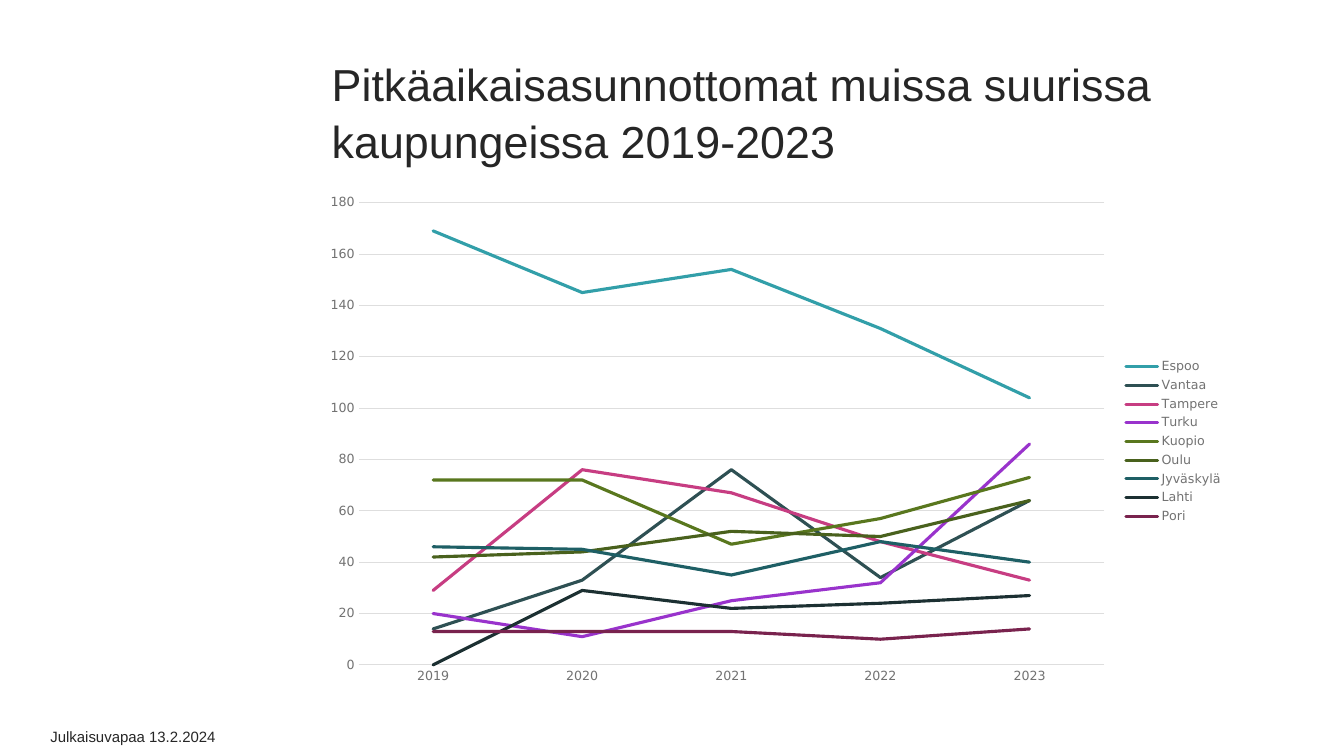
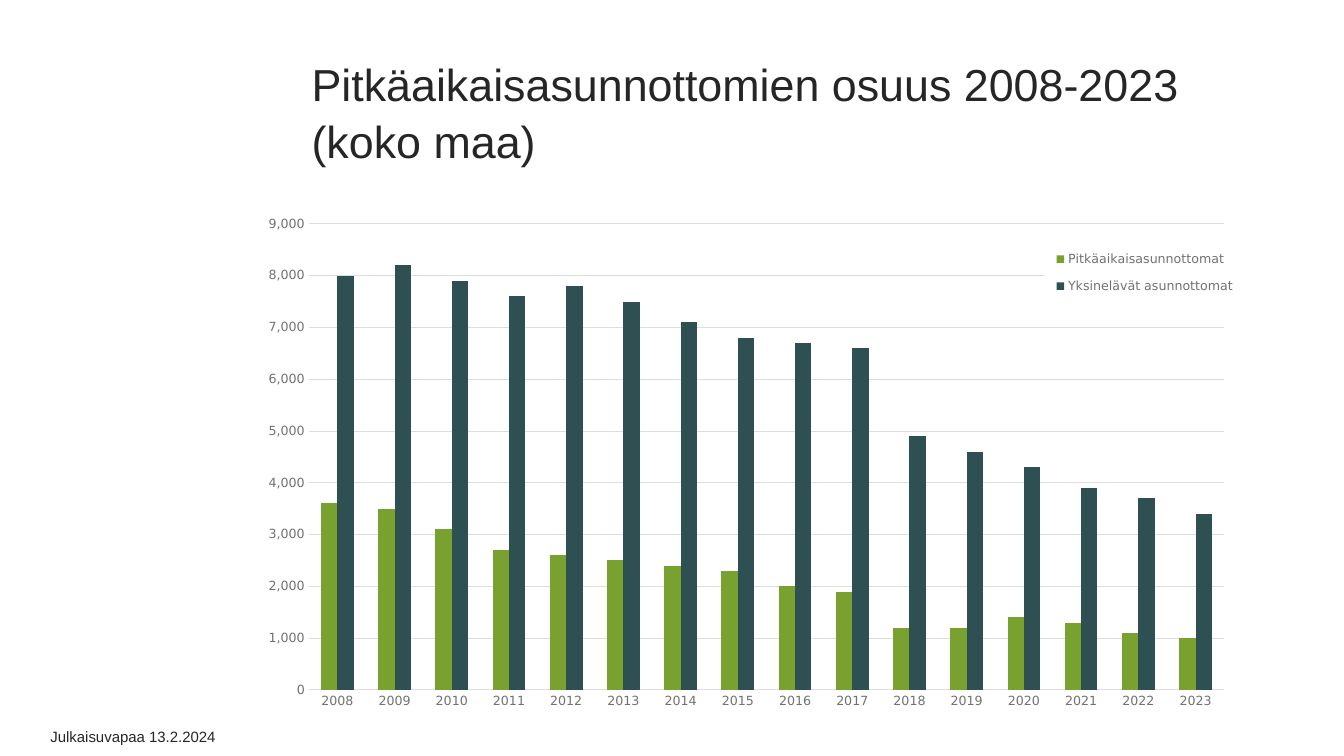
import pptx
import pptx.chart.data
import pptx.dml.color
import pptx.enum.chart
import pptx.enum.text
import pptx.oxml.ns
import pptx.util
from lxml import etree

PX = 9144  # EMU in one px, 100 px to the inch
TEXT_FONT = "Arial"
CHART_FONT = "DejaVu Sans"
COLOURS = {
    "text": "262626", "label": "727272", "grid": "DEDEDE", "paper": "FFFFFF",
    "turquoise": "329FA9", "slate": "2E5053", "pink": "C73D82",
    "violet": "9933CC", "green": "79A130", "olive": "59771E",
    "moss": "49611D", "petrol": "1E5F65", "ink": "1C3032", "wine": "79234E",
}
FOOTER = "Julkaisuvapaa 13.2.2024"

CITIES = [  # name, colour, yearly values
    ("Espoo", "turquoise", (169, 145, 154, 131, 104)),
    ("Vantaa", "slate", (14, 33, 76, 34, 64)),
    ("Tampere", "pink", (29, 76, 67, 48, 33)),
    ("Turku", "violet", (20, 11, 25, 32, 86)),
    ("Kuopio", "olive", (72, 72, 47, 57, 73)),
    ("Oulu", "moss", (42, 44, 52, 50, 64)),
    ("Jyväskylä", "petrol", (46, 45, 35, 48, 40)),
    ("Lahti", "ink", (0, 29, 22, 24, 27)),
    ("Pori", "wine", (13, 13, 13, 10, 14)),
]
COUNTRY = [
    ("Pitkäaikaisasunnottomat", "green",
     (3600, 3500, 3100, 2700, 2600, 2500, 2400, 2300,
      2000, 1900, 1200, 1200, 1400, 1300, 1100, 1000)),
    ("Yksinelävät asunnottomat", "slate",
     (8000, 8200, 7900, 7600, 7800, 7500, 7100, 6800,
      6700, 6600, 4900, 4600, 4300, 3900, 3700, 3400)),
]


def px(*lengths):
    return [pptx.util.Emu(length * PX) for length in lengths]


def colour(name):
    return pptx.dml.color.RGBColor.from_string(COLOURS[name])


def format_font(font, size, color, name):
    font.size = pptx.util.Pt(size)
    font.color.rgb = colour(color)
    font.name = name


def write_text(frame, text, size, color="text", space_after=0, line_spacing=1.0,
               anchor=pptx.enum.text.MSO_ANCHOR.TOP):
    """Fill a text frame with one left-aligned paragraph."""
    frame.word_wrap = True
    frame.auto_size = pptx.enum.text.MSO_AUTO_SIZE.NONE
    frame.vertical_anchor = anchor
    para = frame.paragraphs[0]
    para.alignment = pptx.enum.text.PP_ALIGN.LEFT
    para.space_after = pptx.util.Pt(space_after)
    para.line_spacing = line_spacing
    span = para.add_run()
    span.text = text
    format_font(span.font, size, color, TEXT_FONT)


def add_page(deck, title, left, width):
    """Add a slide with the shared title style and footer."""
    page = deck.slides.add_slide(deck.slide_layouts[5])
    heading = page.shapes.title
    heading.left, heading.top, heading.width, heading.height = px(left, 85, width, 50)
    write_text(heading.text_frame, title, 32, line_spacing=1.05,
               anchor=pptx.enum.text.MSO_ANCHOR.MIDDLE)
    footer = page.shapes.add_textbox(*px(37, 715, 233, 33)).text_frame
    footer.margin_left, footer.margin_right = px(13, 13)
    footer.margin_top, footer.margin_bottom = px(7, 7)
    write_text(footer, FOOTER, 10.7, space_after=8)
    return page


def make_layout(area, inner=False):
    """Build a manual chart layout from fractions of the chart frame."""
    tag = pptx.oxml.ns.qn
    layout = etree.Element(tag("c:layout"))
    manual = etree.SubElement(layout, tag("c:manualLayout"))
    settings = [("layoutTarget", "inner")] if inner else []
    settings += [("xMode", "edge"), ("yMode", "edge"), *zip("xywh", area)]
    for name, value in settings:
        etree.SubElement(manual, tag("c:" + name)).set("val", str(value))
    return layout


def format_axes(chart, maximum, step, number_format):
    category, value = chart.category_axis, chart.value_axis
    for axis in (category, value):
        axis.major_tick_mark = pptx.enum.chart.XL_TICK_MARK.NONE
        axis.minor_tick_mark = pptx.enum.chart.XL_TICK_MARK.NONE
        format_font(axis.tick_labels.font, 9, "label", CHART_FONT)
    value.minimum_scale, value.maximum_scale, value.major_unit = 0, maximum, step
    value.has_major_gridlines = True
    value.format.line.fill.background()
    value.tick_labels.number_format = number_format
    value.tick_labels.number_format_is_linked = False
    for line in (category.format.line, value.major_gridlines.format.line):
        line.color.rgb = colour("grid")
        line.width = pptx.util.Pt(0.75)


def format_legend(chart, position, area, overlay):
    chart.has_legend = True
    legend = chart.legend
    legend.position = position
    legend.include_in_layout = overlay
    format_font(legend.font, 9, "label", CHART_FONT)
    chart.element.xpath("//c:legend/c:legendPos")[0].addnext(make_layout(area))
    if overlay:  # paper fill keeps the gridlines behind the entries
        tag = pptx.oxml.ns.qn
        style = etree.Element(tag("c:spPr"))
        fill = etree.SubElement(style, tag("a:solidFill"))
        etree.SubElement(fill, tag("a:srgbClr")).set("val", COLOURS["paper"])
        chart.element.xpath("//c:legend/c:overlay")[0].addnext(style)


def add_chart(page, kind, frame, years, rows, plot_area):
    """Add a chart with fixed plot area and the shared font."""
    data = pptx.chart.data.CategoryChartData()
    data.categories = [str(year) for year in years]
    for name, _, values in rows:
        data.add_series(name, values)
    chart = page.shapes.add_chart(kind, *px(*frame), data).chart
    chart.has_title = False
    format_font(chart.font, 10, "text", CHART_FONT)
    chart.plots[0].vary_by_categories = False
    plot = chart.element.xpath("//c:plotArea")[0]
    for layout in plot.xpath("c:layout"):
        plot.remove(layout)
    plot.insert(0, make_layout(plot_area, inner=True))
    return chart


def add_city_lines(page):
    chart = add_chart(page, pptx.enum.chart.XL_CHART_TYPE.LINE, (310, 186, 913, 504),
                      range(2019, 2024), CITIES, (0.05, 0.03, 0.81, 0.91))
    format_axes(chart, 180, 20, "General")
    format_legend(chart, pptx.enum.chart.XL_LEGEND_POSITION.RIGHT,
                  (0.84, 0.25, 0.13, 0.5), overlay=False)
    for series, (_, color, _) in zip(chart.series, CITIES):
        series.smooth = False
        series.marker.style = pptx.enum.chart.XL_MARKER_STYLE.NONE
        series.format.line.color.rgb = colour(color)
        series.format.line.width = pptx.util.Pt(2.25)
    for line in chart.element.xpath("//c:ser/c:spPr/a:ln"):
        line.set("cap", "rnd")


def add_country_columns(page):
    chart = add_chart(page, pptx.enum.chart.XL_CHART_TYPE.COLUMN_CLUSTERED,
                      (247, 207, 987, 508), range(2008, 2024), COUNTRY,
                      (0.06, 0.03, 0.92, 0.91))
    format_axes(chart, 9000, 1000, "#,##0")
    format_legend(chart, pptx.enum.chart.XL_LEGEND_POSITION.CORNER,
                  (0.8, 0.06, 0.2, 0.13), overlay=True)
    chart.plots[0].gap_width = 150
    chart.plots[0].overlap = 0
    for series, (_, color, _) in zip(chart.series, COUNTRY):
        series.format.fill.solid()
        series.format.fill.fore_color.rgb = colour(color)


def main():
    deck = pptx.Presentation()
    deck.slide_width, deck.slide_height = px(1333, 750)
    # Long-term homelessness by city
    add_city_lines(add_page(
        deck, "Pitkäaikaisasunnottomat muissa suurissa kaupungeissa 2019-2023", 319, 914))
    # Share in the whole country
    add_country_columns(add_page(
        deck, "Pitkäaikaisasunnottomien osuus 2008-2023 (koko maa)", 299, 934))
    deck.save("out.pptx")


if __name__ == "__main__":
    main()
